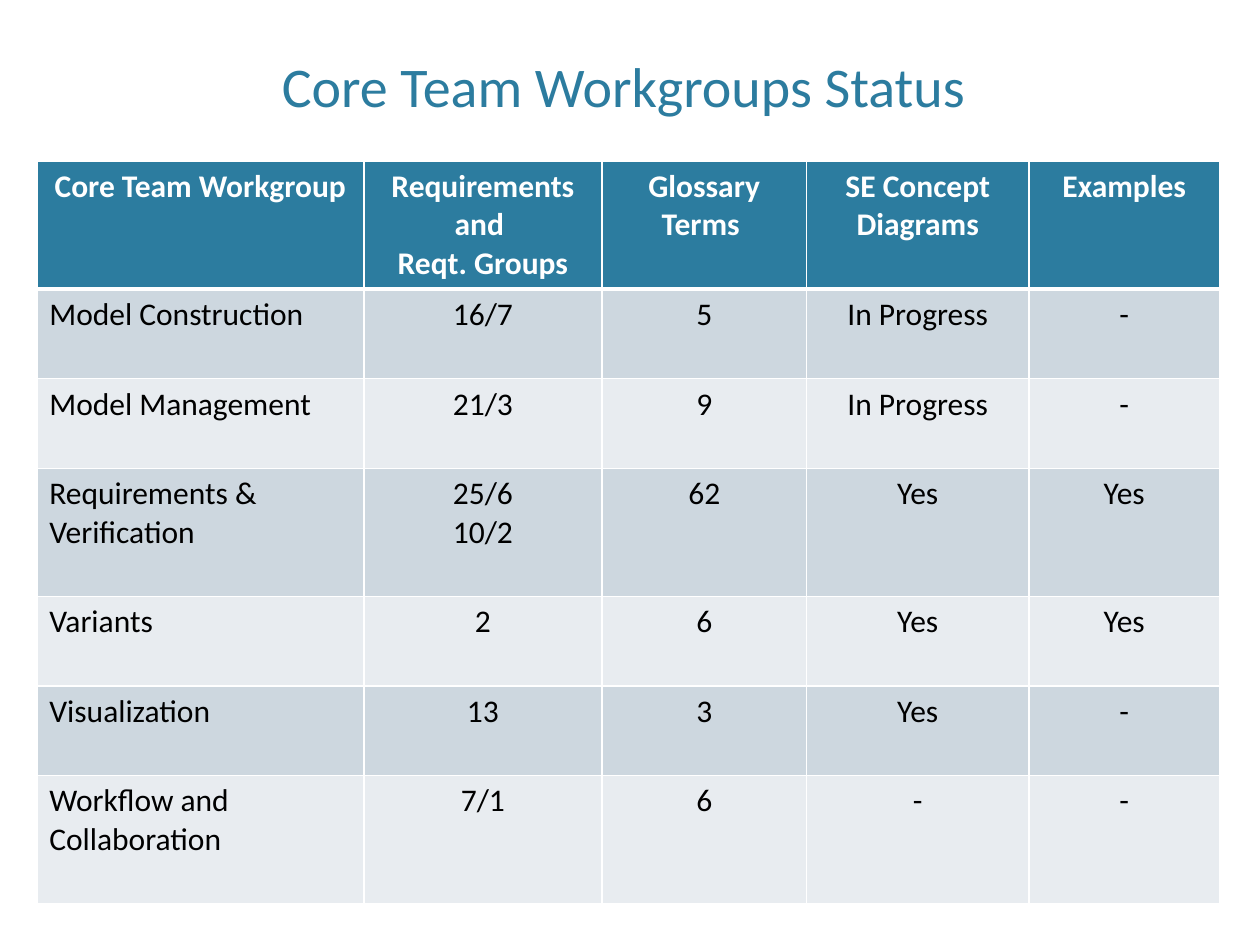
"""Build the Core Team Workgroups Status slide."""
from lxml.etree import SubElement
from pptx import Presentation
from pptx.dml.color import RGBColor as RGB
from pptx.enum.text import MSO_ANCHOR as Anchor, PP_ALIGN as Align
from pptx.oxml.ns import qn
from pptx.util import Pt

COLORS = {"teal": "2C7C9F", "white": "FFFFFF", "black": "000000",
          "dark_band": "CDD7DF", "light_band": "E8ECF0"}
FONT = "Calibri"
TITLE = "Core Team Workgroups Status "
HEADINGS = ("Core Team Workgroup", "Requirements and \nReqt. Groups",
            "Glossary Terms ", "SE Concept Diagrams", "Examples")
WORKGROUPS = [
    ("Model Construction", "16/7", "5", "In Progress", "-"),
    ("Model Management", "21/3", "9", "In Progress", "-"),
    ("Requirements & Verification", "25/6\n10/2", "62", "Yes", "Yes"),
    ("Variants", "2", "6", "Yes", "Yes"),
    ("Visualization", "13", "3", "Yes", "-"),
    ("Workflow and Collaboration", "7/1", "6", "-", "-"),
]
COLUMN_WIDTHS = (187, 136, 117, 127, 109)
ROW_LINES = (3, 2, 2, 3, 2, 2, 3)
LINE_HEIGHT, CELL_PADDING = 22, 7.2
TABLE_LEFT, TABLE_TOP = 21, 92


def write(frame, text, size=18, color="black", bold=False, align=Align.CENTER):
    frame.word_wrap = True
    frame.text = text
    for paragraph in frame.paragraphs:
        paragraph.alignment = align
        for run in paragraph.runs:
            font = run.font
            font.name, font.size, font.bold = FONT, Pt(size), bold
            font.color.rgb = RGB.from_string(COLORS[color])


def add_borders(cell, top, bottom):
    properties = cell._tc.get_or_add_tcPr()
    for side, width in {"L": 1, "R": 1, "T": top, "B": bottom}.items():
        border = SubElement(properties, qn(f"a:ln{side}"), w=str(Pt(width)))
        fill = SubElement(border, qn("a:solidFill"))
        SubElement(fill, qn("a:srgbClr"), val=COLORS["white"])


def add_title(slide):
    title = slide.shapes.add_textbox(Pt(43.2), Pt(8.64), Pt(633.6), Pt(62.64))
    title.text_frame.vertical_anchor = Anchor.BOTTOM
    write(title.text_frame, TITLE, size=32, color="teal")


def add_status_table(slide):
    rows = [HEADINGS, *WORKGROUPS]
    heights = [lines * LINE_HEIGHT + CELL_PADDING for lines in ROW_LINES]
    status = slide.shapes.add_table(
        len(rows), len(HEADINGS), Pt(TABLE_LEFT), Pt(TABLE_TOP),
        Pt(sum(COLUMN_WIDTHS)), Pt(sum(heights))).table
    for column, width in zip(status.columns, COLUMN_WIDTHS):
        column.width = Pt(width)
    for r, (entries, height) in enumerate(zip(rows, heights)):
        status.rows[r].height = Pt(height)
        heading = r == 0
        band = "teal" if heading else "dark_band" if r % 2 else "light_band"
        for c, entry in enumerate(entries):
            cell = status.cell(r, c)
            add_borders(cell, top=3 if r == 1 else 1, bottom=3 if heading else 1)
            cell.fill.solid()
            cell.fill.fore_color.rgb = RGB.from_string(COLORS[band])
            write(cell.text_frame, entry, bold=heading,
                  color="white" if heading else "black",
                  align=Align.CENTER if heading or c else Align.LEFT)


def main():
    deck = Presentation()
    deck.slide_width, deck.slide_height = Pt(720), Pt(540)
    slide = deck.slides.add_slide(deck.slide_layouts[6])
    add_title(slide)
    add_status_table(slide)
    deck.save("out.pptx")


if __name__ == "__main__":
    main()
